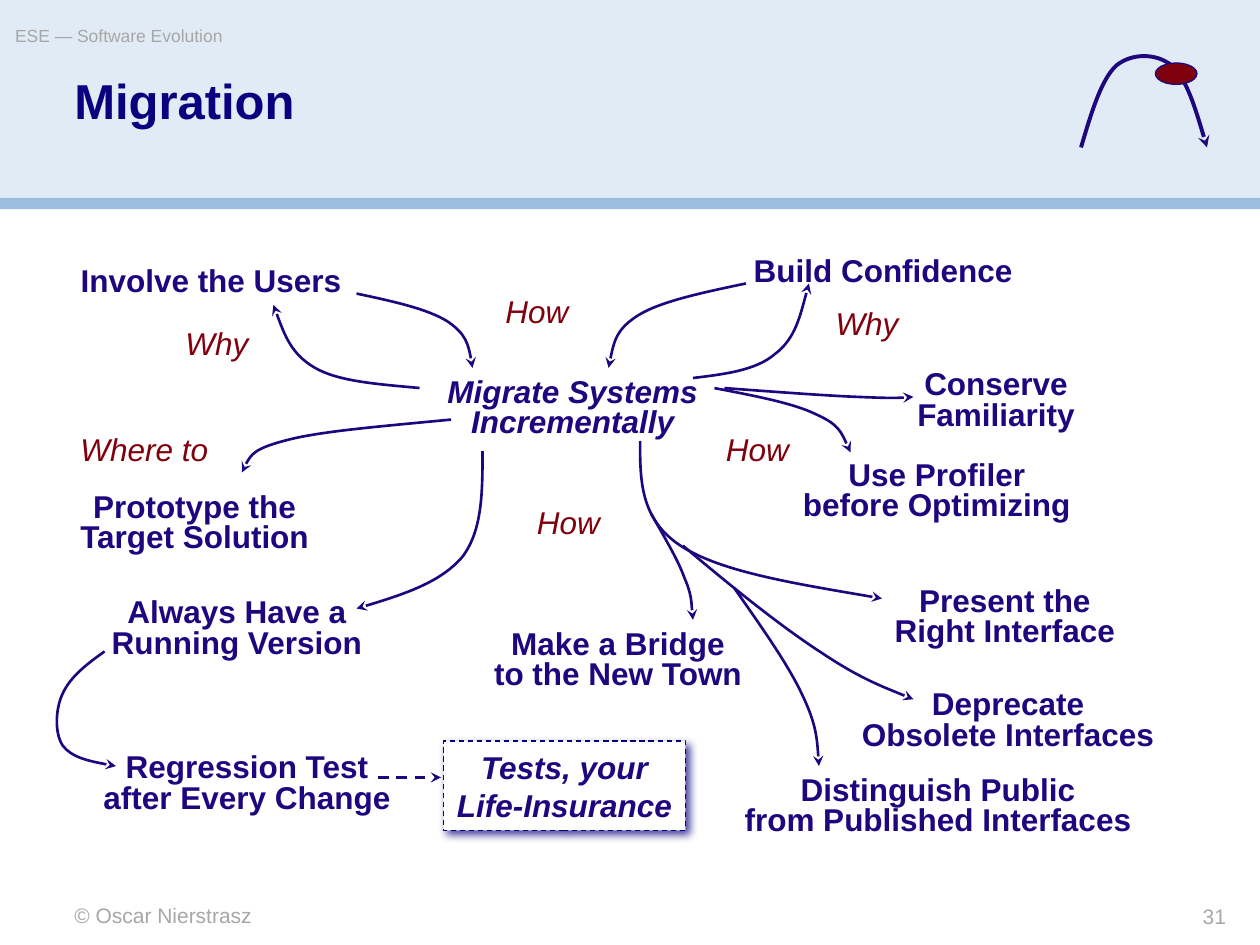
import pptx
import pptx.dml.color
import pptx.enum.dml
import pptx.enum.shapes
import pptx.enum.text
import pptx.oxml
import pptx.oxml.ns
import pptx.util

Inches = pptx.util.Inches
Pt = pptx.util.Pt
RGBColor = pptx.dml.color.RGBColor
SHAPE = pptx.enum.shapes.MSO_SHAPE
ALIGN = pptx.enum.text.PP_ALIGN
ANCHOR = pptx.enum.text.MSO_ANCHOR
AUTO = pptx.enum.text.MSO_AUTO_SIZE
DASH = pptx.enum.dml.MSO_LINE.DASH
qn = pptx.oxml.ns.qn

INK = RGBColor(0x1E, 0x06, 0x7F)
NAVY = RGBColor(0x0A, 0x01, 0x7F)
BORDER = RGBColor(0x05, 0x02, 0x7D)
MAROON = RGBColor(0x7F, 0x01, 0x0D)
GREY = RGBColor(0xA7, 0xA7, 0xA7)
BAND = RGBColor(0xE1, 0xEB, 0xF5)
RULE = RGBColor(0x9C, 0xBD, 0xDE)
WHITE = RGBColor(0xFF, 0xFF, 0xFF)

PATTERN = {"size": Pt(18), "bold": True}
CENTRAL = {**PATTERN, "italic": True}
QUESTION = {"size": Pt(18), "italic": True}

PATTERNS = [
    (7.18, 2.9, 1.45, 0.58, "Conserve\vFamiliarity"),
    (6.27, 3.62, 2.33, 0.58, "Use Profiler\nbefore Optimizing"),
    (5.88, 1.94, 2.26, 0.4, "Build Confidence"),
    (0.54, 2.02, 2.27, 0.4, "Involve the Users"),
    (0.53, 3.87, 2.03, 0.58, "Prototype the\vTarget Solution"),
    (0.78, 4.71, 2.2, 0.58, "Always Have a\vRunning Version"),
    (0.72, 5.94, 2.48, 0.58, "Regression Test\nafter Every Change"),
    (7, 4.62, 1.95, 0.58, "Present the\vRight Interface"),
    (5.81, 6.12, 3.27, 0.58, "Distinguish Public\nfrom Published Interfaces"),
    (6.74, 5.44, 2.52, 0.58, "Deprecate\vObsolete Interfaces"),
    (3.81, 4.96, 2.19, 0.58, "Make a Bridge\nto the New Town"),
]

QUESTIONS = [
    (5.66, 3.36, 0.7, "How"),
    (3.91, 2.27, 0.7, "How"),
    (6.53, 2.36, 0.7, "Why"),
    (1.37, 2.52, 0.7, "Why"),
    (4.16, 3.94, 0.7, "How"),
    (0.33, 3.36, 1.42, "Where to"),
]

CURVES = [
    [(5.67, 3.08), (5.98, 3.14), (6.3, 3.2), (6.48, 3.29), (6.66, 3.37), (6.7, 3.48), (6.75, 3.59)],
    [(5.75, 3.08), (6.15, 3.11), (6.55, 3.14), (6.8, 3.15), (7.05, 3.16), (7.15, 3.16), (7.25, 3.15)],
    [(5.92, 2.25), (5.59, 2.32), (5.25, 2.39), (5.07, 2.5), (4.89, 2.61), (4.86, 2.76), (4.83, 2.92)],
    [(5.5, 3), (5.75, 2.97), (6, 2.94), (6.15, 2.81), (6.31, 2.69), (6.36, 2.47), (6.42, 2.25)],
    [(2.83, 2.33), (3.11, 2.39), (3.39, 2.45), (3.55, 2.55), (3.7, 2.65), (3.73, 2.78), (3.75, 2.92)],
    [(3.33, 3.08), (3.01, 3.05), (2.69, 3.03), (2.5, 2.92), (2.31, 2.81), (2.24, 2.61), (2.17, 2.42)],
    [(5.08, 3.5), (5.08, 3.81), (5.08, 4.12), (5.4, 4.33), (5.72, 4.54), (6.36, 4.64), (7, 4.75)],
    [(5.42, 4.33), (5.81, 4.66), (6.21, 4.98), (6.52, 5.18), (6.82, 5.38), (7.03, 5.46), (7.25, 5.55)],
    [(5.83, 4.67), (6.04, 4.97), (6.26, 5.28), (6.37, 5.52), (6.48, 5.75), (6.49, 5.92), (6.5, 6.08)],
    [(5.17, 4.08), (5.27, 4.26), (5.38, 4.44), (5.43, 4.58), (5.49, 4.72), (5.49, 4.82), (5.5, 4.92)],
    [(3.83, 3.58), (3.83, 3.9), (3.83, 4.21), (3.67, 4.42), (3.5, 4.62), (3.17, 4.73), (2.83, 4.83)],
    [(0.83, 5.17), (0.69, 5.27), (0.56, 5.37), (0.5, 5.5), (0.44, 5.62), (0.43, 5.82), (0.5, 5.92),
     (0.57, 6.01), (0.74, 6.05), (0.92, 6.08)],
    [(3.58, 3.33), (3.07, 3.38), (2.56, 3.42), (2.29, 3.49), (2.01, 3.56), (1.96, 3.65), (1.92, 3.75)],
]

ARC = [(8.58, 1.17), (8.66, 0.9), (8.74, 0.63), (8.86, 0.52), (8.98, 0.42), (9.18, 0.42),
       (9.3, 0.52), (9.42, 0.63), (9.5, 0.9), (9.58, 1.17)]


class SlideBuilder:
    font = "Arial"
    no_margins = {f"margin_{side}": 0 for side in ("left", "top", "right", "bottom")}

    def __init__(self, prs):
        self.s = prs.slides.add_slide(prs.slide_layouts[5])

    def fill_text(self, tf, text, color, font, align=ALIGN.CENTER, spacing=None, **frame):
        tf.text = text
        for name, value in frame.items():
            setattr(tf, name, value)
        for p in tf.paragraphs:
            p.alignment = align
            p.line_spacing = spacing
            for r in p.runs:
                r.font.color.rgb = color
                for name, value in {"name": self.font, **font}.items():
                    setattr(r.font, name, value)

    def title(self, box, text):
        sp = self.s.shapes.title
        sp.left, sp.top, sp.width, sp.height = map(Inches, box)
        self.fill_text(sp.text_frame, text, NAVY, {"size": Pt(28), "bold": True}, ALIGN.LEFT, 0.9,
                       vertical_anchor=ANCHOR.TOP, auto_size=AUTO.NONE, **self.no_margins)
        sp.element.getparent().append(sp.element)

    def label(self, box, text, color, font, align=ALIGN.CENTER, spacing=None, wrap=False):
        sp = self.s.shapes.add_textbox(*map(Inches, box))
        self.fill_text(sp.text_frame, text, color, font, align, spacing, word_wrap=wrap,
                       vertical_anchor=ANCHOR.MIDDLE, auto_size=AUTO.SHAPE_TO_FIT_TEXT)

    def caption(self, box, text, size, align=ALIGN.LEFT, wrap=True):
        sp = self.s.shapes.add_textbox(*map(Inches, box))
        self.fill_text(sp.text_frame, text, GREY, {"size": Pt(size)}, align,
                       word_wrap=wrap, **self.no_margins)

    def shape(self, kind, box, fill, line=None):
        sp = self.s.shapes.add_shape(kind, *map(Inches, box))
        sp.shadow.inherit = False
        sp.fill.solid()
        sp.fill.fore_color.rgb = fill
        if line is None:
            sp.line.fill.background()
        else:
            sp.line.color.rgb = line
            sp.line.width = Pt(0.75)
        return sp

    def note(self, box, text):
        sp = self.shape(SHAPE.RECTANGLE, box, WHITE, BORDER)
        sp.line.dash_style = DASH
        effects = sp.element.spPr.find(qn("a:effectLst"))
        effects.append(pptx.oxml.parse_xml(
            f'<a:outerShdw {pptx.oxml.ns.nsdecls("a")} blurRad="{Pt(5)}" dist="{Pt(3)}" '
            f'dir="2700000"><a:srgbClr val="{NAVY}"><a:alpha val="75000"/></a:srgbClr></a:outerShdw>'))
        self.fill_text(sp.text_frame, text, INK, CENTRAL, word_wrap=False,
                       vertical_anchor=ANCHOR.MIDDLE, auto_size=AUTO.SHAPE_TO_FIT_TEXT)

    def arrow_style(self, sp, width):
        sp.line.color.rgb = INK
        sp.line.width = Pt(width)
        sp.element.spPr.find(qn("a:ln")).append(pptx.oxml.parse_xml(
            f'<a:tailEnd {pptx.oxml.ns.nsdecls("a")} type="stealth"/>'))

    def curve(self, points, width=1.5):
        start, *rest = [(Inches(x), Inches(y)) for x, y in points]
        builder = self.s.shapes.build_freeform(*start)
        builder.add_line_segments(rest, close=False)
        sp = builder.convert_to_shape()
        sp.shadow.inherit = False
        sp.fill.background()
        segments = list(sp.element.iter(qn("a:lnTo")))
        for first, second, third in zip(*[iter(segments)] * 3):
            first.tag = qn("a:cubicBezTo")
            for extra in (second, third):
                first.append(extra[0])
                extra.getparent().remove(extra)
        self.arrow_style(sp, width)

    def dashed_arrow(self, start, end):
        c = self.s.shapes.add_connector(pptx.enum.shapes.MSO_CONNECTOR.STRAIGHT,
                                        *map(Inches, start + end))
        c.line.dash_style = DASH
        self.arrow_style(c, 1.5)
        c.element.spPr.append(pptx.oxml.parse_xml(f'<a:effectLst {pptx.oxml.ns.nsdecls("a")}/>'))


def main():
    prs = pptx.Presentation()
    prs.slide_width, prs.slide_height = Inches(10), Inches(7.5)
    b = SlideBuilder(prs)
    b.shape(SHAPE.RECTANGLE, (0, 0, 10, 1.58), BAND)
    b.shape(SHAPE.RECTANGLE, (0, 1.57, 10, 0.09), RULE)
    b.caption((0.59, 7.16, 4.17, 0.2), "© Oscar Nierstrasz", 12)
    b.caption((8.25, 7.17, 1.48, 0.2), "31", 12, ALIGN.RIGHT)
    b.caption((0.12, 0.2, 5.9, 0.28), "ESE — Software Evolution", 10, wrap=False)
    b.title((0.59, 0.61, 8.83, 0.89), "Migration")
    b.label((3.45, 2.96, 2.19, 0.58), "Migrate Systems\vIncrementally", INK, CENTRAL, spacing=0.8)
    for *box, text in PATTERNS:
        spacing = 0.8 if box[3] > 0.4 else None
        b.label(box, text, INK, PATTERN, spacing=spacing)
    for left, top, width, text in QUESTIONS:
        b.label((left, top, width, 0.4), text, MAROON, QUESTION, ALIGN.RIGHT, wrap=width > 1)
    for points in CURVES:
        b.curve(points)
    b.note((3.52, 5.88, 1.92, 0.71), "Tests, your\nLife-Insurance")
    b.dashed_arrow((3, 6.17), (3.5, 6.17))
    b.curve(ARC, 2.25)
    b.shape(SHAPE.OVAL, (9.17, 0.5, 0.33, 0.17), MAROON, INK)
    prs.save("out.pptx")


if __name__ == "__main__":
    main()
